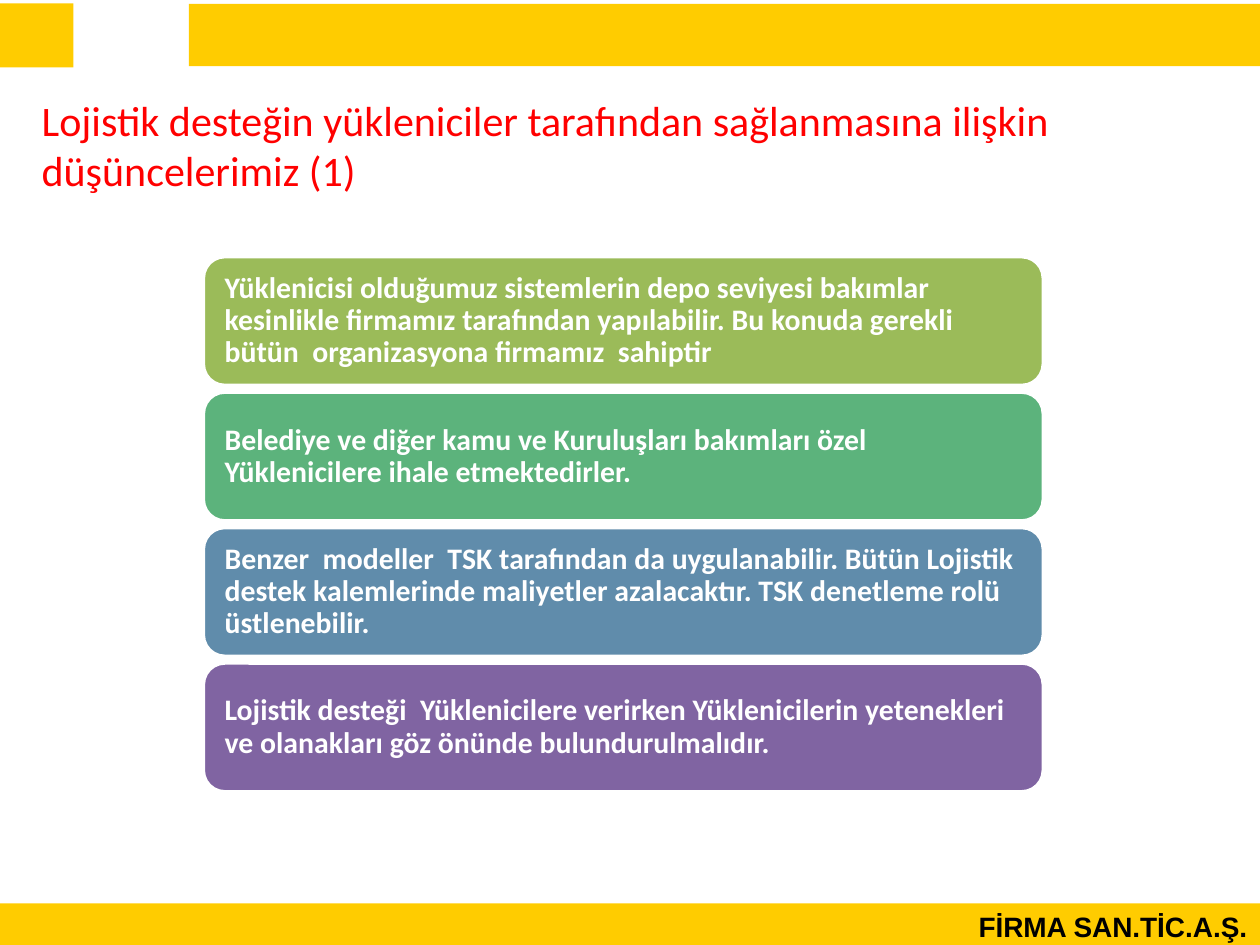
from pptx import Presentation
from pptx.dml.color import RGBColor
from pptx.enum.shapes import MSO_SHAPE
from pptx.enum.text import MSO_ANCHOR, MSO_AUTO_SIZE, PP_ALIGN
from pptx.util import Pt

RECTANGLE, ROUNDED = MSO_SHAPE.RECTANGLE, MSO_SHAPE.ROUNDED_RECTANGLE
TOP, MIDDLE = MSO_ANCHOR.TOP, MSO_ANCHOR.MIDDLE
LEFT, RIGHT = PP_ALIGN.LEFT, PP_ALIGN.RIGHT

TITLE = "Lojistik desteğin yükleniciler tarafından sağlanmasına ilişkin düşüncelerimiz (1)"
FOOTER = "FİRMA SAN.TİC.A.Ş."
OPINIONS = [
    ("Yüklenicisi olduğumuz sistemlerin depo seviyesi bakımlar kesinlikle firmamız tarafından "
     "yapılabilir. Bu konuda gerekli bütün  organizasyona firmamız  sahiptir", "9BBB59"),
    ("Belediye ve diğer kamu ve Kuruluşları bakımları özel Yüklenicilere ihale etmektedirler.",
     "5CB37C"),
    ("Benzer  modeller  TSK tarafından da uygulanabilir. Bütün Lojistik destek kalemlerinde "
     "maliyetler azalacaktır. TSK denetleme rolü üstlenebilir.", "608CAB"),
    ("Lojistik desteği  Yüklenicilere verirken Yüklenicilerin yetenekleri ve olanakları "
     "göz önünde bulundurulmalıdır.", "8064A2"),
]

THEME = {
    "band": "FFCC00",
    "edge": "FFFFFF",
    "title": {"name": "Calibri", "size": 24, "bold": False, "color": "FF0000"},
    "card": {"name": "Calibri", "size": 17, "bold": True, "color": "FFFFFF"},
    "footer": {"name": "Arial", "size": 16, "bold": True, "color": "000000"},
}

PAGE_SIZE = (720, 540)
TITLE_AREA = (16.6, 50.4, 692, 65.5)
HEADER_BANDS = [(0, 2, 42, 36.5), (108, 2.3, 612, 35.5)]
FOOTER_BAND = (0, 516.2, 720, 23.8)
CARD_AREA = (116.2, 146.7, 480, 73.6)
CARD_STEP = 77.4
CARD_INSET = 8.6


def place(shape, area):
    """Set position and size from an area in points."""
    for name, value in zip(("left", "top", "width", "height"), area):
        setattr(shape, name, Pt(value))


def add_block(page, kind, area, color, edge=None):
    """Add a filled shape, with an outline when an edge colour is given."""
    shape = page.shapes.add_shape(kind, *map(Pt, area))
    shape.shadow.inherit = False
    shape.fill.solid()
    shape.fill.fore_color.rgb = RGBColor.from_string(color)
    if edge:
        shape.line.color.rgb = RGBColor.from_string(edge)
        shape.line.width = Pt(2)
    else:
        shape.line.fill.background()
    return shape


def write(shape, text, style, align=LEFT, anchor=TOP, inset=(7.2, 3.6), spacing=1.0):
    """Write one paragraph into a shape in the given style."""
    frame = shape.text_frame
    across, down = map(Pt, inset)
    layout = {"word_wrap": True, "auto_size": MSO_AUTO_SIZE.NONE, "vertical_anchor": anchor,
              "margin_left": across, "margin_right": across,
              "margin_top": down, "margin_bottom": down}
    for name, value in layout.items():
        setattr(frame, name, value)
    para = frame.paragraphs[0]
    para.alignment, para.line_spacing = align, spacing
    span = para.add_run()
    span.text = text
    for name, value in {"name": style["name"], "size": Pt(style["size"]),
                        "bold": style["bold"]}.items():
        setattr(span.font, name, value)
    span.font.color.rgb = RGBColor.from_string(style["color"])


def main():
    """Build the slide and save it."""
    deck = Presentation()
    deck.slide_width, deck.slide_height = map(Pt, PAGE_SIZE)
    page = deck.slides.add_slide(deck.slide_layouts[5])

    for area in HEADER_BANDS:
        add_block(page, RECTANGLE, area, THEME["band"])
    footer = add_block(page, RECTANGLE, FOOTER_BAND, THEME["band"])
    write(footer, FOOTER, THEME["footer"], align=RIGHT)

    left, top, width, height = CARD_AREA
    for index, (text, color) in enumerate(OPINIONS):
        area = (left, top + index * CARD_STEP, width, height)
        card = add_block(page, ROUNDED, area, color, THEME["edge"])
        write(card, text, THEME["card"], anchor=MIDDLE,
              inset=(CARD_INSET, CARD_INSET), spacing=0.9)

    title = page.shapes.title
    place(title, TITLE_AREA)
    write(title, TITLE, THEME["title"])
    deck.save("out.pptx")


if __name__ == "__main__":
    main()
